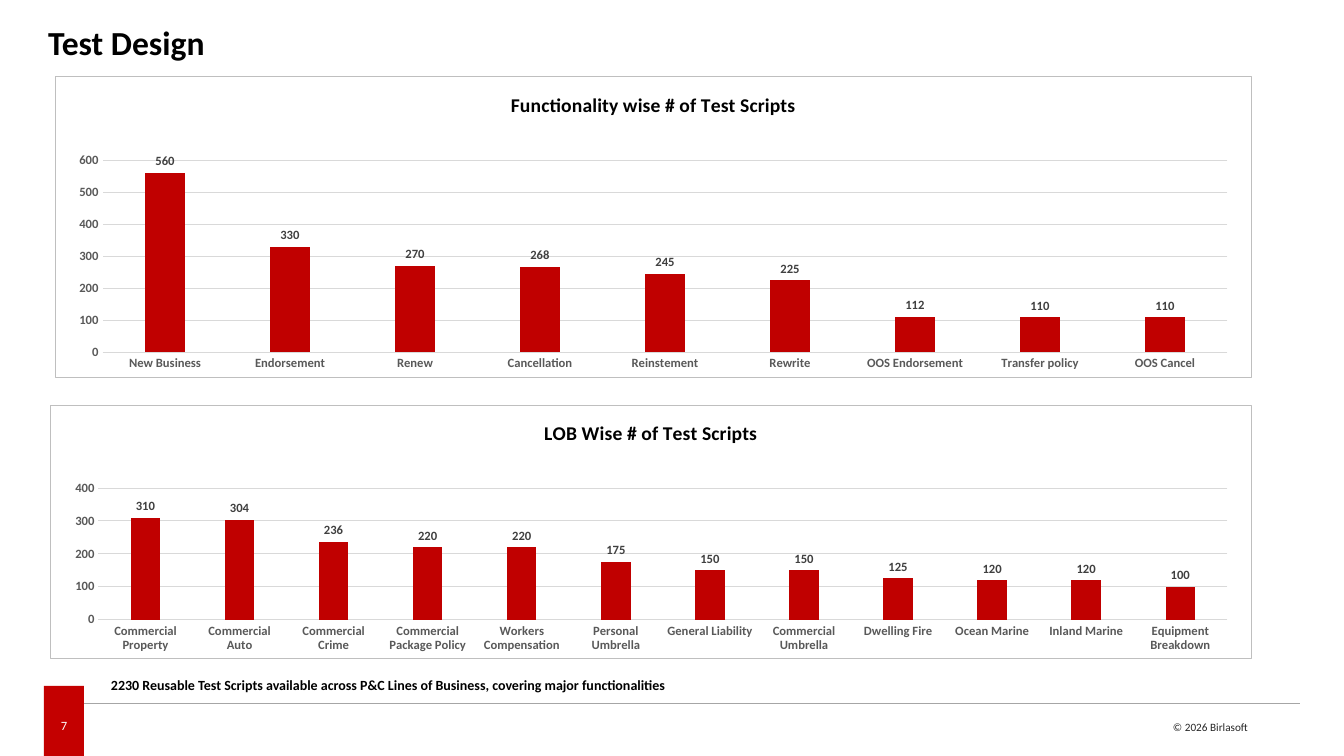
"""Build the Test Design slide with two column charts of test script counts."""
from lxml import etree
from pptx import Presentation, oxml, util as u
from pptx.chart.data import CategoryChartData
from pptx.dml.color import RGBColor
from pptx.enum import chart as ch, shapes, text
from pptx.oxml import ns

PX = 914400 / 100.8
COLORS = {"black": "000000", "white": "FFFFFF", "tab": "C40000", "bar": "C00000",
          "rule": "A6A6A6", "border": "BFBFBF", "grid": "D9D9D9",
          "axis": "595959", "label": "404040", "footer": "262626"}


def px(*lengths):
    return [u.Emu(round(n * PX)) for n in lengths]


def style(font, size, color, bold=False):
    font.name, font.size, font.bold = "Calibri", u.Pt(size), bold
    font.color.rgb = RGBColor.from_string(COLORS[color])


prs = Presentation()
prs.slide_width, prs.slide_height = px(1344, 756)
s = prs.slides.add_slide(prs.slide_layouts[6])

rule = s.shapes.add_connector(shapes.MSO_CONNECTOR.STRAIGHT, *px(74, 703, 1300, 703))
rule.line.color.rgb = RGBColor.from_string(COLORS["rule"])
rule.line.width = u.Pt(0.25)
etree.SubElement(rule._element.spPr, ns.qn("a:effectLst"))

tab = s.shapes.add_shape(shapes.MSO_SHAPE.RECTANGLE, *px(44, 686, 40, 70))
tab.shadow.inherit = False
tab.fill.solid()
tab.fill.fore_color.rgb = RGBColor.from_string(COLORS["tab"])
tab.line.fill.background()

LEFT, CENTER = text.PP_ALIGN.LEFT, text.PP_ALIGN.CENTER
TOP, MIDDLE = text.MSO_ANCHOR.TOP, text.MSO_ANCHOR.MIDDLE
texts = [
    ("7", (44, 713, 40, 25), (10, 5), 9, "white", False, CENTER, MIDDLE, True),
    ("© 2026 Birlasoft", (1163, 715, 110, 25), (10, 5), 8, "footer", False, LEFT, MIDDLE, True),
    ("2230 Reusable Test Scripts available across P&C Lines of Business, "
     "covering major functionalities",
     (111, 677, 563, 17), (0, 0), 10, "black", True, LEFT, TOP, False),
    ("Test Design", (38, 27, 1294, 72), (10, 0), 24, "black", True, LEFT, TOP, True),
]
for words, box, (side, end), size, color, bold, align, anchor, wrap in texts:
    tf = s.shapes.add_textbox(*px(*box)).text_frame
    tf.margin_left = tf.margin_right = px(side)[0]
    tf.margin_top = tf.margin_bottom = px(end)[0]
    tf.word_wrap, tf.vertical_anchor = wrap, anchor
    p = tf.paragraphs[0]
    p.text, p.alignment = words, align
    if size == 24:
        p.line_spacing = 0.9
    style(p.runs[0].font, size, color, bold)

charts = [
    ("Functionality wise # of Test Scripts", (55, 76, 1197, 302), (102, 160, 1126, 193), 600,
     {"New Business": 560, "Endorsement": 330, "Renew": 270, "Cancellation": 268,
      "Reinstement": 245, "Rewrite": 225, "OOS Endorsement": 112,
      "Transfer policy": 110, "OOS Cancel": 110}),
    ("LOB Wise # of Test Scripts", (50, 405, 1202, 254), (98, 488, 1130, 132), 400,
     {"Commercial Property": 310, "Commercial Auto": 304, "Commercial Crime": 236,
      "Commercial Package Policy": 220, "Workers Compensation": 220,
      "Personal Umbrella": 175, "General Liability": 150, "Commercial Umbrella": 150,
      "Dwelling Fire": 125, "Ocean Marine": 120, "Inland Marine": 120,
      "Equipment Breakdown": 100}),
]
for title, box, plot_box, top, counts in charts:
    data = CategoryChartData()
    data.categories = list(counts)
    data.add_series("Series 1", list(counts.values()))
    chart = s.shapes.add_chart(ch.XL_CHART_TYPE.COLUMN_CLUSTERED, *px(*box), data).chart
    style(chart.font, 10, "black")
    chart.has_legend = False
    chart.has_title = True
    chart.chart_title.include_in_layout = False
    p = chart.chart_title.text_frame.paragraphs[0]
    p.text = title
    style(p.runs[0].font, 14, "black", True)

    for axis in (chart.category_axis, chart.value_axis):
        axis.major_tick_mark = axis.minor_tick_mark = ch.XL_TICK_MARK.NONE
        style(axis.tick_labels.font, 9, "axis", True)
    value_axis = chart.value_axis
    value_axis.minimum_scale, value_axis.maximum_scale, value_axis.major_unit = 0, top, 100
    value_axis.format.line.fill.background()
    for line in (chart.category_axis.format.line, value_axis.major_gridlines.format.line):
        line.color.rgb = RGBColor.from_string(COLORS["grid"])
        line.width = u.Pt(0.75)

    plot = chart.plots[0]
    plot.gap_width, plot.overlap, plot.vary_by_categories = 219, -27, False
    fill = plot.series[0].format.fill
    fill.solid()
    fill.fore_color.rgb = RGBColor.from_string(COLORS["bar"])
    labels = plot.series[0].data_labels
    labels.show_value = True
    labels.position = ch.XL_LABEL_POSITION.OUTSIDE_END
    style(labels.font, 9, "label", True)

    x, y, w, h = box
    left, upper, width, height = plot_box
    fractions = {"x": (left - x) / w, "y": (upper - y) / h, "w": width / w, "h": height / h}
    area = chart._chartSpace.find(".//" + ns.qn("c:plotArea"))
    for old in area.findall(ns.qn("c:layout")):
        area.remove(old)
    layout = etree.Element(ns.qn("c:layout"))
    manual = etree.SubElement(layout, ns.qn("c:manualLayout"))
    settings = {"layoutTarget": "inner", "xMode": "edge", "yMode": "edge"}
    settings.update({k: f"{v:.4f}" for k, v in fractions.items()})
    for name, value in settings.items():
        etree.SubElement(manual, ns.qn("c:" + name)).set("val", value)
    area.insert(0, layout)
    border = oxml.parse_xml(
        f'<c:spPr {ns.nsdecls("c", "a")}><a:solidFill><a:srgbClr val="{COLORS["white"]}"/>'
        f'</a:solidFill><a:ln w="{u.Pt(0.75)}"><a:solidFill>'
        f'<a:srgbClr val="{COLORS["border"]}"/></a:solidFill></a:ln></c:spPr>')
    chart._chartSpace.find(ns.qn("c:chart")).addnext(border)

prs.save("out.pptx")
